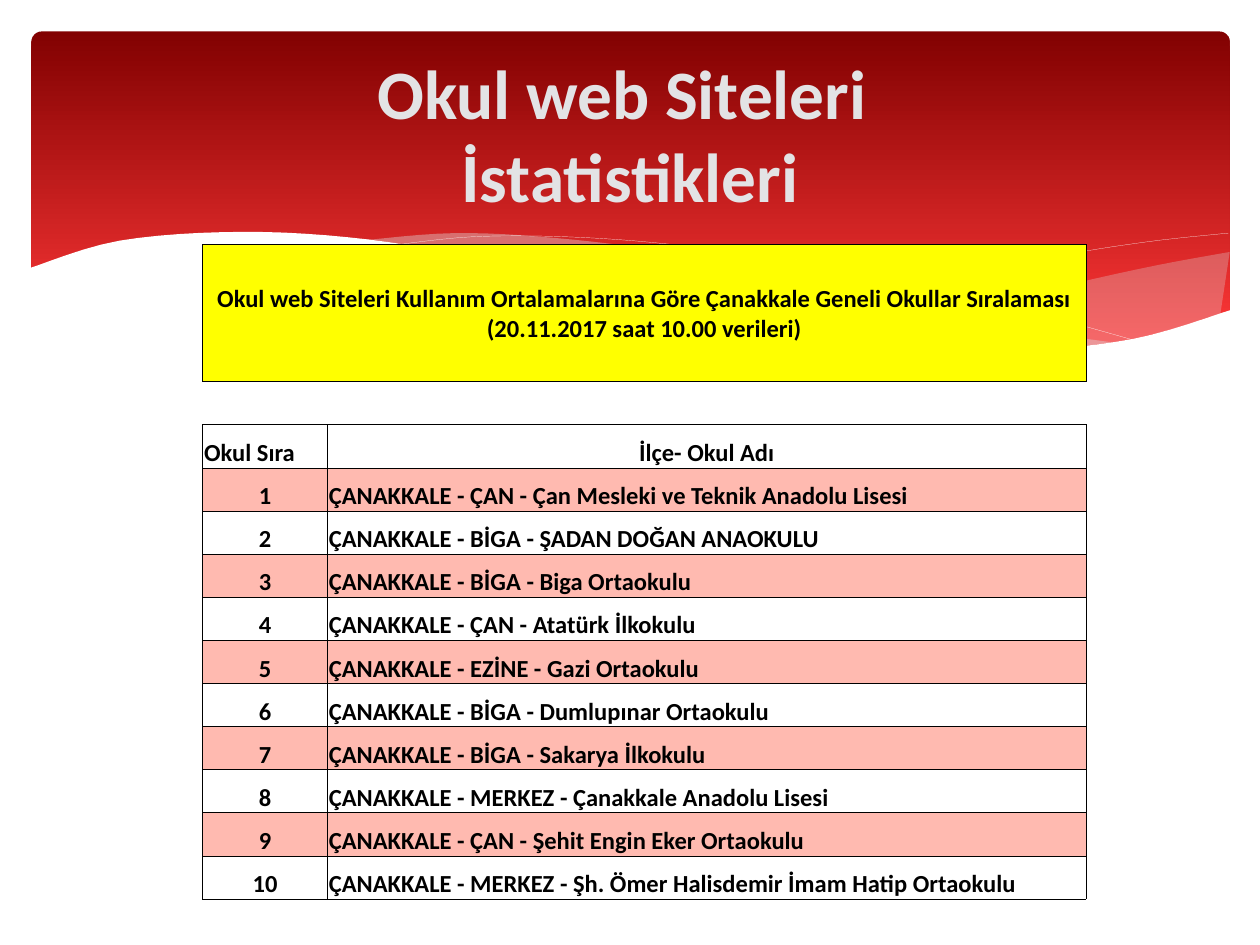
from lxml.etree import SubElement
from pptx import Presentation
from pptx.dml.color import RGBColor
from pptx.enum.shapes import MSO_SHAPE as Preset
from pptx.enum.text import MSO_ANCHOR as Anchor, PP_ALIGN as Align
from pptx.oxml.ns import qn
from pptx.util import Inches, Pt

hex_color = RGBColor.from_string


def smooth_curve(knots, steps=6):
    padded = [knots[0], *knots, knots[-1]]
    points = []
    for before, start, end, after in zip(padded, padded[1:], padded[2:], padded[3:]):
        for step in range(steps):
            t = step / steps
            points.append(tuple(
                b + ((c - a) * t + (2 * a - 5 * b + 4 * c - d) * t ** 2
                     + (3 * b - a - 3 * c + d) * t ** 3) / 2
                for a, b, c, d in zip(before, start, end, after)))
    return points + [knots[-1]]


def write_text(frame, text, size, ink, align):
    frame.text = text
    paragraph = frame.paragraphs[0]
    paragraph.alignment = align
    for run in paragraph.runs:
        for name, setting in {"name": "Calibri", "size": Pt(size), "bold": True}.items():
            setattr(run.font, name, setting)
        run.font.color.rgb = hex_color(ink)


presentation = Presentation()
presentation.slide_width, presentation.slide_height = Inches(10), Inches(7.5)
slide = presentation.slides.add_slide(presentation.slide_layouts[5])

banner = slide.shapes.add_shape(
    Preset.ROUNDED_RECTANGLE, Inches(0.25), Inches(0.25), Inches(9.51), Inches(2.7))
banner.adjustments[0] = 0.03
banner.shadow.inherit = False
banner.line.fill.background()
banner.fill.gradient()
banner.fill.gradient_angle = 270
for stop, (position, value) in zip(banner.fill.gradient_stops, [(0, "820101"), (0.9, "FE3737")]):
    stop.position = position
    stop.color.rgb = hex_color(value)

crest = smooth_curve([
    (0.23, 2.13), (0.95, 1.91), (1.93, 1.84), (2.92, 1.9), (3.91, 2.07), (4.75, 2.27),
    (5.79, 2.5), (6.88, 2.68), (8.09, 2.77), (8.99, 2.69), (9.77, 2.46)])
right_ridge = smooth_curve([(6.61, 2.65), (7.53, 2.48), (8.61, 2.23), (9.21, 2.1), (9.76, 2)])
middle_ridge = smooth_curve([
    (2.86, 1.91), (3.61, 1.85), (4.42, 1.89), (5.28, 2), (6.29, 2.22), (7.41, 2.47),
    (8.37, 2.65), (8.93, 2.73)])
falling_line = smooth_curve([
    (3.09, 1.95), (3.74, 1.88), (4.5, 1.88), (5.33, 1.94), (6.36, 2.08), (7.27, 2.26),
    (8.31, 2.51), (9.07, 2.72)])
rising_line = smooth_curve([(6.13, 2.57), (7.2, 2.29), (8.36, 2.04), (9.1, 1.92), (9.75, 1.85)])

right_band, middle_band = [
    ridge + [point for point in reversed(crest) if ridge[0][0] <= point[0] <= ridge[-1][0]]
    for ridge in (right_ridge, middle_ridge)]
white_wave = crest + [(9.77, 3.29), (0.23, 3.29)]

for points, fill, opacity in [
        (right_band, "DEDEE0", 29), (middle_band, "DEDEE0", 40),
        (falling_line, None, 100), (rising_line, None, 100), (white_wave, "FFFFFF", 100)]:
    start, *rest = [(Inches(x), Inches(y)) for x, y in points]
    builder = slide.shapes.build_freeform(*start)
    builder.add_line_segments(rest, close=fill is not None)
    wave = builder.convert_to_shape()
    wave.shadow.inherit = False
    if fill:
        wave.line.fill.background()
        wave.fill.solid()
        wave.fill.fore_color.rgb = hex_color(fill)
        tint = wave._element.spPr.find(qn("a:solidFill"))[0]
        SubElement(tint, qn("a:alpha"), val=str(opacity * 1000))
    else:
        wave.fill.background()
        wave.line.color.rgb = hex_color("FFFFFF")
        wave.line.width = Pt(0.1)

title = slide.shapes.title
slide.shapes._spTree.append(title._element)
for name, length in {"left": 0.5, "top": 0.37, "width": 9, "height": 1.37}.items():
    setattr(title, name, Inches(length))
title.text_frame.vertical_anchor = Anchor.MIDDLE
write_text(title.text_frame, "Okul web Siteleri \vİstatistikleri", 39.6, "E3E3E5", Align.CENTER)

heading = ("Okul web Siteleri Kullanım Ortalamalarına Göre Çanakkale Geneli "
           "Okullar Sıralaması (20.11.2017 saat 10.00 verileri)")
schools = [
    "ÇAN - Çan Mesleki ve Teknik Anadolu Lisesi",
    "BİGA - ŞADAN DOĞAN ANAOKULU",
    "BİGA - Biga Ortaokulu",
    "ÇAN - Atatürk İlkokulu",
    "EZİNE - Gazi Ortaokulu",
    "BİGA - Dumlupınar Ortaokulu",
    "BİGA - Sakarya İlkokulu",
    "MERKEZ - Çanakkale Anadolu Lisesi",
    "ÇAN - Şehit Engin Eker Ortaokulu",
    "MERKEZ - Şh. Ömer Halisdemir İmam Hatip Ortaokulu"]

heading_row, spacer_row = 0, 1
rows = [
    ([(heading, Align.CENTER)], "FFFF00"),
    ([], None),
    ([("Okul Sıra", Align.LEFT), ("İlçe- Okul Adı", Align.CENTER)], None)]
for rank, school in enumerate(schools, 1):
    texts = [(str(rank), Align.CENTER), (f"ÇANAKKALE - {school}", Align.LEFT)]
    rows.append((texts, "FFBAB0" if rank % 2 else None))

column_widths = [0.99] + [0.96] * 5 + [1.22]
last_column = len(column_widths) - 1
heading_height, table_height = 1.09, 5.2
row_height = (table_height - heading_height) / (len(rows) - 1)
margins = {"margin_left": 0.01, "margin_right": 0.01, "margin_top": 0.01, "margin_bottom": 0}

table = slide.shapes.add_table(
    len(rows), len(column_widths), Inches(1.61), Inches(1.94),
    Inches(sum(column_widths)), Inches(table_height)).table
table.first_row = table.horz_banding = False
for column, width in zip(table.columns, column_widths):
    column.width = Inches(width)

for index, (texts, fill) in enumerate(rows):
    is_heading, is_spacer = index == heading_row, index == spacer_row
    row = table.rows[index]
    row.height = Inches(heading_height if is_heading else row_height)
    for cell in row.cells:
        for name, margin in margins.items():
            setattr(cell, name, Inches(margin))
        cell.vertical_anchor = Anchor.MIDDLE if is_heading else Anchor.BOTTOM
        for side in "LRTB":
            border = SubElement(cell._tc.get_or_add_tcPr(), qn(f"a:ln{side}"), w=str(Pt(0.5)))
            if is_spacer and side in "LR":
                SubElement(border, qn("a:noFill"))
            else:
                SubElement(SubElement(border, qn("a:solidFill")), qn("a:srgbClr"), val="000000")
        if fill:
            cell.fill.solid()
            cell.fill.fore_color.rgb = hex_color(fill)
        else:
            cell.fill.background()
    if texts:
        table.cell(index, len(texts) - 1).merge(table.cell(index, last_column))
    for position, (text, align) in enumerate(texts):
        write_text(table.cell(index, position).text_frame, text, 14, "000000", align)

presentation.save("out.pptx")
